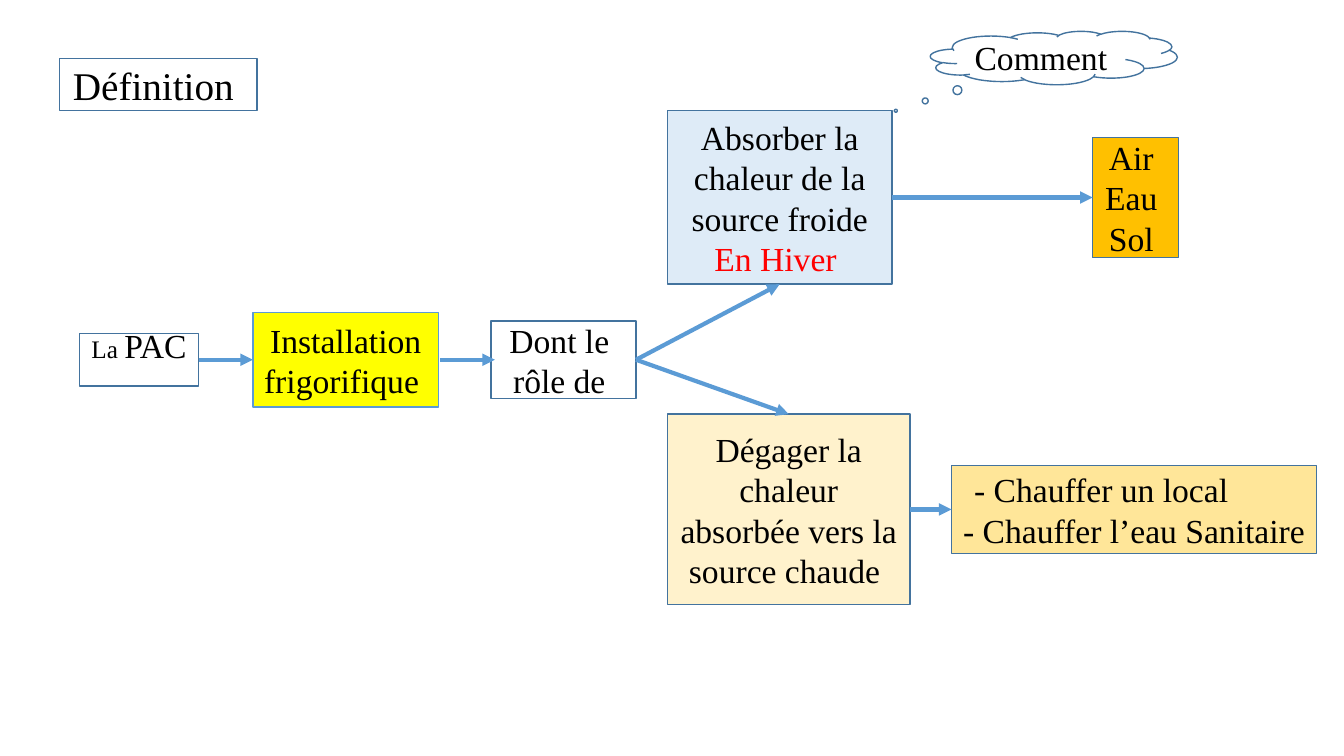
from dataclasses import dataclass

from pptx import Presentation
from pptx.dml.color import RGBColor
from pptx.enum.shapes import MSO_CONNECTOR, MSO_SHAPE
from pptx.enum.text import MSO_ANCHOR, PP_ALIGN
from pptx.oxml.ns import qn
from pptx.util import Inches, Pt
from lxml.etree import SubElement

COLS = 40
TOP, LEFT, BOTTOM, RIGHT = range(4)


@dataclass(frozen=True)
class Theme:
    font: str = "Times New Roman"
    ink: str = "000000"
    alert: str = "FF0000"
    edge: str = "43739E"
    arrow: str = "5B9BD5"
    plant: str = "FFFF00"
    cold: str = "DEEBF7"
    source: str = "FFC000"
    hot: str = "FFF2CC"
    usage: str = "FFE699"
    title: int = 28
    body: int = 24
    small: int = 18
    thin: int = 1
    thick: int = 3


@dataclass(frozen=True)
class Box:
    """Rectangle in grid units: 40 square cells span the slide's width."""
    x: float
    y: float
    w: float
    h: float

    def cell(self, x, y, w, h):
        return Box(self.x + x, self.y + y, w, h)

    def mid(self, x, w, h):
        """Cell centred on the height of this box."""
        return self.cell(x, (self.h - h) / 2, w, h)


THEME = Theme()
deck = Presentation()
deck.slide_width, deck.slide_height = Inches(13.33), Inches(7.5)
slide = deck.slides.add_slide(deck.slide_layouts[6])


def grid(units):
    return round(units * Inches(13.33) / COLS)


def run(text, size=THEME.body, color=THEME.ink):
    return text, size, color


def node(box, lines, fill=None, edge=THEME.edge, kind=MSO_SHAPE.RECTANGLE):
    """Outlined shape; each line is a list of runs."""
    shape = slide.shapes.add_shape(kind, *map(grid, (box.x, box.y, box.w, box.h)))
    shape.shadow.inherit = False
    if fill:
        shape.fill.solid()
        shape.fill.fore_color.rgb = RGBColor.from_string(fill)
    else:
        shape.fill.background()
    shape.line.color.rgb = RGBColor.from_string(edge)
    shape.line.width = Pt(THEME.thin)
    frame = shape.text_frame
    frame.word_wrap = True
    frame.vertical_anchor = MSO_ANCHOR.MIDDLE
    for i, runs in enumerate(lines):
        para = frame.add_paragraph() if i else frame.paragraphs[0]
        para.alignment = PP_ALIGN.CENTER
        for text, size, color in runs:
            piece = para.add_run()
            piece.text = text
            piece.font.name = THEME.font
            piece.font.size = Pt(size)
            piece.font.color.rgb = RGBColor.from_string(color)
    return shape


def arrow(start=(0, 0), end=(0, 0), first=None, last=None, side=LEFT):
    """Arrow between grid points, or from first's right to a side of last."""
    line = slide.shapes.add_connector(
        MSO_CONNECTOR.STRAIGHT, *map(grid, (*start, *end)))
    if first is not None:
        line.begin_connect(first, RIGHT)
        line.end_connect(last, side)
    line.line.color.rgb = RGBColor.from_string(THEME.arrow)
    line.line.width = Pt(THEME.thick)
    SubElement(line.get_or_add_ln(), qn("a:tailEnd"), type="triangle")
    SubElement(line._element.spPr, qn("a:effectLst"))


def heading(box):
    node(box, [[run("Définition ", THEME.title)]])


def chain(box):
    """The heat pump, what it is, and the lead-in to its two roles."""
    pump = node(box.mid(0, 3.54, 1.56), [[run("La ", THEME.small), run("PAC")]])
    pump.text_frame.margin_bottom = Inches(0.34)
    plant = node(box.mid(5.16, 5.52, 2.82), [[run("Installation frigorifique ")]],
                 THEME.plant, THEME.arrow)
    role = node(box.mid(12.24, 4.32, 2.31),
                [[run("Dont le ")], [run("rôle de ")]])
    arrow(first=pump, last=plant)
    level = box.y + box.h / 2
    arrow((box.x + 10.74, level), (box.x + 12.36, level))
    return role


def winter(box, role):
    """Cold source branch, with the cloud above it."""
    row = box.cell(0, 2.37, box.w, 5.16)
    cold = node(row.mid(0, 6.69, 5.16),
                [[run("Absorber la chaleur de la source froide")],
                 [run("En Hiver ", color=THEME.alert)]], THEME.cold)
    source = node(row.mid(box.w - 2.55, 2.55, 3.57),
                  [[run(word)] for word in ("Air ", "Eau ", "Sol ")], THEME.source)
    arrow(first=role, last=cold, side=BOTTOM)
    arrow(first=cold, last=source)
    cloud = node(box.cell(7.83, 0, 7.35, 1.59), [[run("Comment ")]],
                 kind=MSO_SHAPE.CLOUD_CALLOUT)
    cloud.adjustments[0], cloud.adjustments[1] = -0.64, 0.99


def heating(box, role):
    """Hot source branch."""
    hot = node(box.mid(0, 7.23, 5.67),
               [[run("Dégager la chaleur absorbée vers la source chaude ")]],
               THEME.hot)
    usage = node(box.mid(box.w - 10.86, 10.86, 2.61),
                 [[run("- Chauffer un local")],
                  [run("- Chauffer l’eau Sanitaire ")]], THEME.usage)
    para = usage.text_frame.paragraphs[0]
    para.alignment = PP_ALIGN.LEFT
    para._p.get_or_add_pPr().set("marL", str(Pt(9)))
    arrow(first=role, last=hot, side=TOP)
    arrow(first=hot, last=usage)


def main():
    heading(Box(1.77, 1.74, 5.88, 1.56))
    role = chain(Box(2.37, 9.3, 16.56, 2.82))
    winter(Box(19.86, 0.93, 15.21, 7.53), role)
    heating(Box(19.86, 12.33, 19.32, 5.67), role)
    deck.save("out.pptx")


if __name__ == "__main__":
    main()
